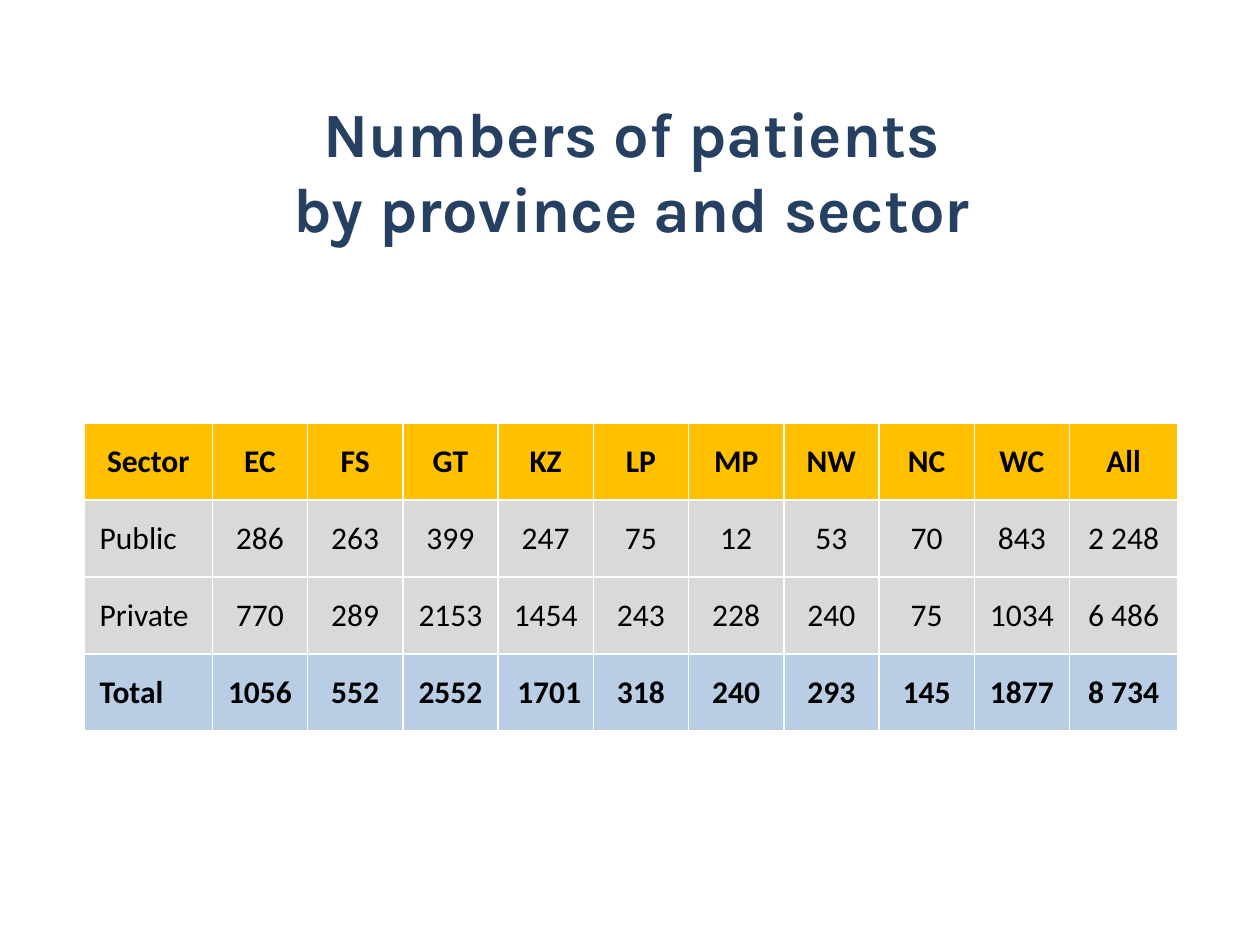
from dataclasses import dataclass

from lxml.etree import SubElement
from pptx import Presentation
from pptx.dml.color import RGBColor as Rgb
from pptx.enum.text import MSO_ANCHOR as Anchor, MSO_AUTO_SIZE as AutoSize, PP_ALIGN as Align
from pptx.oxml.ns import qn
from pptx.util import Cm, Pt


@dataclass(frozen=True)
class Theme:
    title_font: str = "Karla"
    table_font: str = "Calibri"
    title_size: int = 36
    table_size: int = 18
    title_color: str = "254061"
    text_color: str = "000000"
    header_fill: str = "FFC000"
    sector_fill: str = "D9D9D9"
    total_fill: str = "B9CDE5"
    border_color: str = "FFFFFF"
    border_width: int = 1


class SlideBuilder:
    def __init__(self, theme, page):
        self.theme = theme
        self.page = page

    def format_text(self, frame, font, size, color, bold, align):
        for para in frame.paragraphs:
            para.alignment = align
            for span in para.runs:
                span.font.name = font
                span.font.size = Pt(size)
                span.font.bold = bold
                span.font.color.rgb = Rgb.from_string(color)

    def title(self, text, left, top, width, height):
        theme = self.theme
        box = self.page.shapes.title
        box.left, box.top, box.width, box.height = map(Cm, (left, top, width, height))
        frame = box.text_frame
        frame.text = text
        frame.word_wrap = True
        frame.auto_size = AutoSize.NONE
        frame.vertical_anchor = Anchor.MIDDLE
        self.format_text(frame, theme.title_font, theme.title_size,
                         theme.title_color, True, Align.CENTER)

    def borders(self, cell):
        properties = cell._tc.get_or_add_tcPr()
        for side in ("lnL", "lnR", "lnT", "lnB"):
            line = SubElement(properties, qn(f"a:{side}"), w=str(Pt(self.theme.border_width)))
            fill = SubElement(line, qn("a:solidFill"))
            SubElement(fill, qn("a:srgbClr"), val=self.theme.border_color)

    def cell(self, cell, text, fill, bold, is_label):
        theme = self.theme
        cell.text = text
        cell.vertical_anchor = Anchor.MIDDLE
        cell.margin_left = Cm(0.31 if is_label else 0.02)
        cell.margin_right = cell.margin_top = Cm(0.02)
        cell.margin_bottom = 0
        self.borders(cell)
        cell.fill.solid()
        cell.fill.fore_color.rgb = Rgb.from_string(fill)
        self.format_text(cell.text_frame, theme.table_font, theme.table_size,
                         theme.text_color, bold, Align.LEFT if is_label else Align.CENTER)

    def table(self, rows, left, top, widths, row_height):
        frame = self.page.shapes.add_table(
            len(rows), len(widths), Cm(left), Cm(top),
            Cm(sum(widths)), Cm(row_height * len(rows)))
        table = frame.table
        for column, width in zip(table.columns, widths):
            column.width = Cm(width)
        for row_index, (fill, bold, texts) in enumerate(rows):
            table.rows[row_index].height = Cm(row_height)
            for column_index, text in enumerate(texts):
                is_label = row_index > 0 and column_index == 0
                self.cell(table.cell(row_index, column_index), text, fill, bold, is_label)


def main():
    theme = Theme()
    deck = Presentation()
    deck.slide_width, deck.slide_height = Cm(25.4), Cm(19.05)
    builder = SlideBuilder(theme, deck.slides.add_slide(deck.slide_layouts[5]))

    builder.title("Numbers of patients\vby province and sector", 1.3, 2.13, 22.86, 2.59)

    patients = [
        (theme.header_fill, True,
         ["Sector", "EC", "FS", "GT", "KZ", "LP", "MP", "NW", "NC", "WC", "All"]),
        (theme.sector_fill, False,
         ["Public", "286", "263", "399", "247", "75", "12", "53", "70", "843", "2 248"]),
        (theme.sector_fill, False,
         ["Private", "770", "289", "2153", "1454", "243", "228", "240", "75", "1034", "6 486"]),
        (theme.total_fill, True,
         ["Total", "1056", "552", "2552", " 1701", "318", "240", "293", "145", "1877", "8 734"]),
    ]
    builder.table(patients, 1.7, 8.53, [2.58] + [1.92] * 9 + [2.18], 1.55)

    deck.save("out.pptx")


if __name__ == "__main__":
    main()
